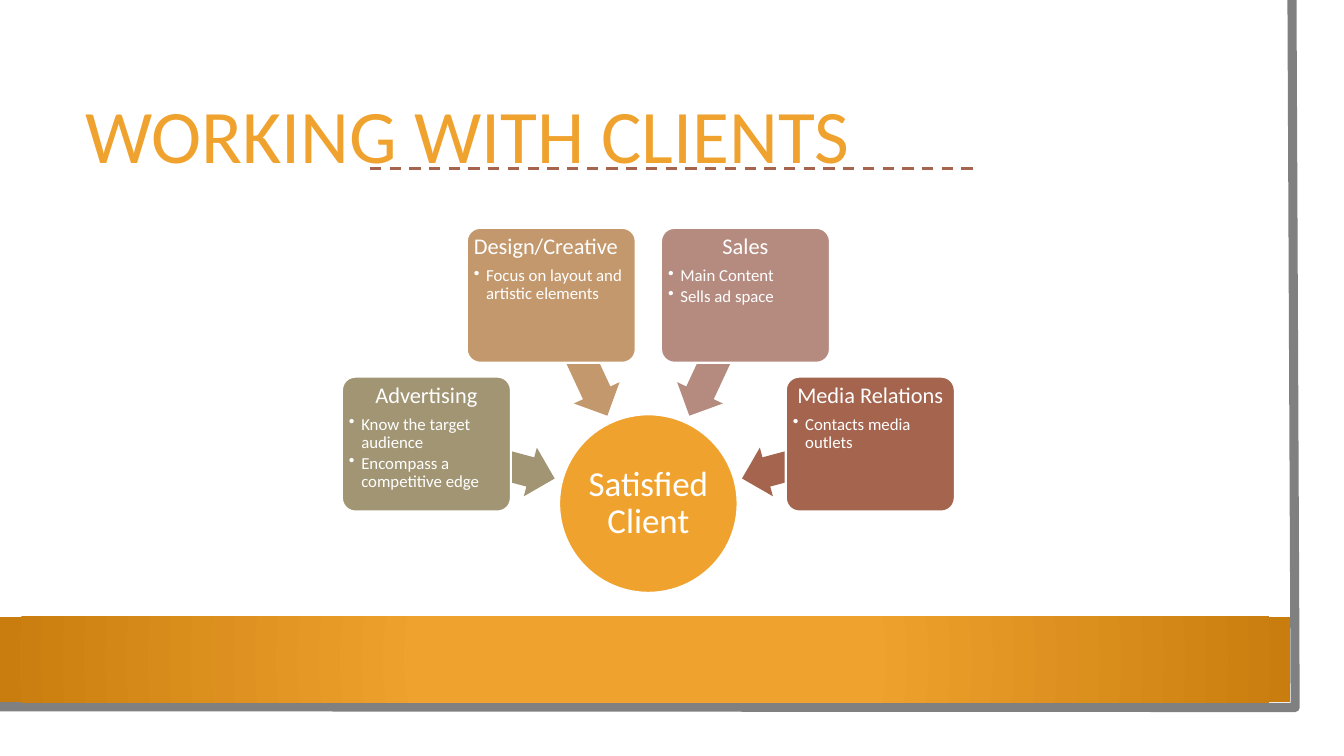
import math
from dataclasses import dataclass

from lxml import etree
from pptx import Presentation
from pptx.dml.color import RGBColor
from pptx.enum.dml import MSO_LINE
from pptx.enum.shapes import MSO_CONNECTOR, MSO_SHAPE
from pptx.enum.text import MSO_ANCHOR, PP_ALIGN
from pptx.oxml.ns import qn
from pptx.shapes.autoshape import Shape
from pptx.slide import Slide
from pptx.text.text import TextFrame
from pptx.util import Cm, Pt

LEFT, CENTER = PP_ALIGN.LEFT, PP_ALIGN.CENTER
TOP, MIDDLE = MSO_ANCHOR.TOP, MSO_ANCHOR.MIDDLE
DASH = MSO_LINE.DASH
STRAIGHT = MSO_CONNECTOR.STRAIGHT
RECTANGLE, ROUNDED = MSO_SHAPE.RECTANGLE, MSO_SHAPE.ROUNDED_RECTANGLE
OVAL, LEFT_ARROW = MSO_SHAPE.OVAL, MSO_SHAPE.LEFT_ARROW

FONT = "Calibri"
ORANGE, DARK_ORANGE, RUST = "F0A22E", "C87D0E", "A5644E"
WHITE, GRAY = "FFFFFF", "808080"

HUB_X, HUB_Y, HUB_SIZE = 16.34, 12.69, 4.5
CARD_WIDTH, CARD_HEIGHT, CARD_RADIUS = 4.26, 3.4, 5.79
ARROW_WIDTH, ARROW_HEIGHT, ARROW_RADIUS = 3.35, 1.27, 4.12
BULLET_INDENT = 0.31


@dataclass(frozen=True)
class Team:
    name: str
    duties: tuple[str, ...]
    fill: str
    angle: int
    align: PP_ALIGN = CENTER


TEAMS = (
    Team("Media Relations", ("Contacts media outlets",), RUST, 15),
    Team("Sales", ("Main Content", "Sells ad space"), "B58B80", 65),
    Team("Design/Creative", ("Focus on layout and artistic elements",), "C3986D", 115, LEFT),
    Team("Advertising", ("Know the target audience", "Encompass a competitive edge"), "A19574", 165),
)


def color(value: str) -> RGBColor:
    return RGBColor.from_string(value)


def prepare_frame(frame: TextFrame, inset: float, anchor: MSO_ANCHOR) -> None:
    frame.word_wrap = True
    frame.vertical_anchor = anchor
    frame.margin_left = frame.margin_right = Cm(inset)
    frame.margin_top = frame.margin_bottom = Cm(inset)


def write(frame: TextFrame, text: str, *, size: float, fill: str = WHITE,
          align: PP_ALIGN = CENTER, after: float = 0, bullet: bool = False) -> None:
    first = frame.paragraphs[0]
    paragraph = frame.add_paragraph() if first.runs else first
    paragraph.alignment = align
    paragraph.line_spacing = 0.9
    paragraph.space_after = Pt(after)
    if bullet:
        paragraph.level = 1
        properties = paragraph._p.get_or_add_pPr()
        properties.set("marL", str(Cm(BULLET_INDENT)))
        properties.set("indent", str(-Cm(BULLET_INDENT)))
        etree.SubElement(properties, qn("a:buChar")).set("char", "•")
    run = paragraph.add_run()
    run.text = text
    run.font.name = FONT
    run.font.size = Pt(size)
    run.font.color.rgb = color(fill)


def add_centered(slide: Slide, kind: MSO_SHAPE, x: float, y: float, width: float,
                 height: float, fill: str, outline: bool = False) -> Shape:
    shape = slide.shapes.add_shape(
        kind, Cm(x - width / 2), Cm(y - height / 2), Cm(width), Cm(height))
    shape.shadow.inherit = False
    shape.fill.solid()
    shape.fill.fore_color.rgb = color(fill)
    if outline:
        shape.line.color.rgb = color(WHITE)
        shape.line.width = Pt(1.5)
    else:
        shape.line.fill.background()
    return shape


def around_hub(radius: float, angle: int) -> tuple[float, float]:
    turn = math.radians(angle)
    return HUB_X + radius * math.cos(turn), HUB_Y - radius * math.sin(turn)


def draw_page_edge(slide: Slide) -> None:
    builder = slide.shapes.build_freeform(Cm(32.56), Cm(0))
    builder.add_line_segments(
        [(Cm(32.64), Cm(17.83)), (Cm(-0.08), Cm(17.81))], close=False)
    edge = builder.convert_to_shape()
    edge.shadow.inherit = False
    edge.fill.background()
    edge.line.color.rgb = color(GRAY)
    edge.line.width = Pt(6.5)


def draw_band(slide: Slide) -> None:
    band = add_centered(slide, RECTANGLE, 16.26, 16.62, 32.52, 2.16, ORANGE)
    band.fill.gradient()
    stops = zip(band.fill.gradient_stops, ((0.34, ORANGE), (1, DARK_ORANGE)))
    for stop, (position, tone) in stops:
        stop.position = position
        stop.color.rgb = color(tone)
    gradient = band._element.spPr.find(qn("a:gradFill"))
    gradient.remove(gradient.find(qn("a:lin")))
    radial = etree.SubElement(gradient, qn("a:path"))
    radial.set("path", "circle")
    focus = etree.SubElement(radial, qn("a:fillToRect"))
    for side in "ltrb":
        focus.set(side, "50000")


def draw_title(slide: Slide) -> None:
    rule = slide.shapes.add_connector(STRAIGHT, Cm(9.32), Cm(4.24), Cm(24.56), Cm(4.24))
    etree.SubElement(rule._element.spPr, qn("a:effectLst"))
    rule.line.color.rgb = color(RUST)
    rule.line.width = Pt(2)
    rule.line.dash_style = DASH
    title = slide.shapes.add_textbox(Cm(1.9), Cm(1.9), Cm(28.88), Cm(3.2)).text_frame
    prepare_frame(title, 0.25, MIDDLE)
    write(title, "WORKING WITH CLIENTS", size=54, fill=ORANGE, align=LEFT)


def draw_hub(slide: Slide) -> None:
    hub = add_centered(slide, OVAL, HUB_X, HUB_Y, HUB_SIZE, HUB_SIZE, ORANGE, outline=True)
    prepare_frame(hub.text_frame, 0.05, MIDDLE)
    write(hub.text_frame, "Satisfied Client", size=25)


def draw_team(slide: Slide, team: Team) -> None:
    arrow = add_centered(slide, LEFT_ARROW, *around_hub(ARROW_RADIUS, team.angle),
                         ARROW_WIDTH, ARROW_HEIGHT, team.fill)
    arrow.adjustments[0] = 0.6
    arrow.adjustments[1] = 0.5
    arrow.rotation = 360 - team.angle
    card = add_centered(slide, ROUNDED, *around_hub(CARD_RADIUS, team.angle),
                        CARD_WIDTH, CARD_HEIGHT, team.fill, outline=True)
    card.adjustments[0] = 0.1
    prepare_frame(card.text_frame, 0.08, TOP)
    write(card.text_frame, team.name, size=16, align=team.align, after=5.6)
    for duty in team.duties:
        write(card.text_frame, duty, size=12, align=LEFT, after=1.8, bullet=True)


def main() -> None:
    deck = Presentation()
    deck.slide_width, deck.slide_height = Cm(33.87), Cm(19.05)
    slide = deck.slides.add_slide(deck.slide_layouts[6])
    draw_page_edge(slide)
    draw_band(slide)
    draw_title(slide)
    draw_hub(slide)
    for team in TEAMS:
        draw_team(slide, team)
    deck.save("out.pptx")


if __name__ == "__main__":
    main()
